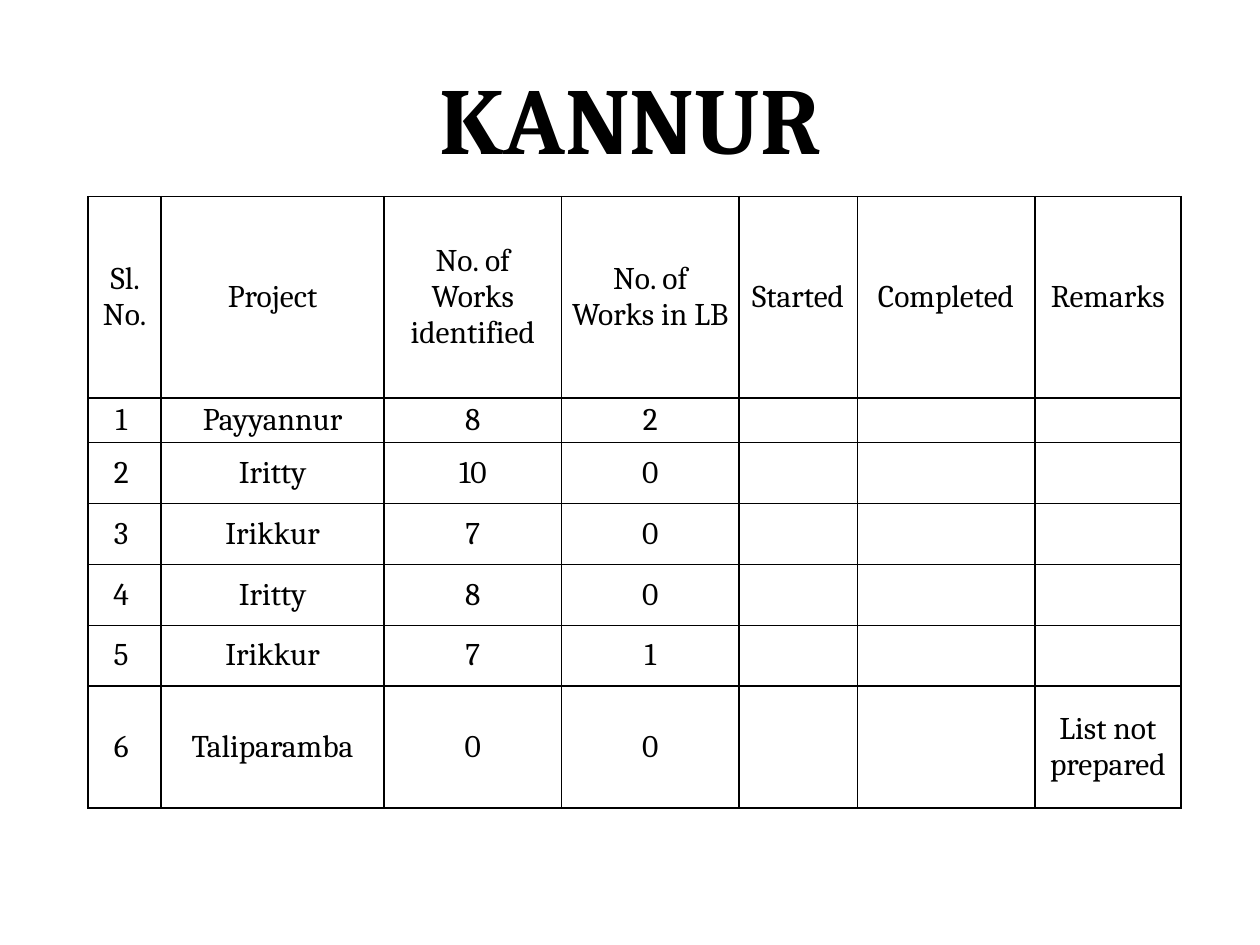
from lxml import etree
from pptx import Presentation
from pptx.dml.color import RGBColor
from pptx.enum import text
from pptx.oxml import ns
from pptx.util import Pt

BLACK = RGBColor(0, 0, 0)
COLUMN_WIDTHS = [41.7, 127.4, 101.4, 101.4, 67.6, 101.5, 83.5]
ROW_HEIGHTS = [115, 25.6] + [34.8] * 4 + [69.6]
HEADINGS = ["Sl. No.", "Project", "No. of Works identified", "No. of Works in LB",
            "Started", "Completed", "Remarks"]
PROJECTS = [
    ("Payyannur", 8, 2, ""),
    ("Iritty", 10, 0, ""),
    ("Irikkur", 7, 0, ""),
    ("Iritty", 8, 0, ""),
    ("Irikkur", 7, 1, ""),
    ("Taliparamba", 0, 0, "List not prepared"),
]


def apply(target, values):
    for name, value in values.items():
        setattr(target, name, value)


class ReportSlide:
    """Holds the style and the slide, and adds each kind of element."""

    font = "Cambria"
    cell_format = {
        "margin_left": Pt(5), "margin_right": Pt(5),
        "margin_top": 0, "margin_bottom": 0,
        "vertical_anchor": text.MSO_ANCHOR.MIDDLE,
    }
    paragraph_format = {"alignment": text.PP_ALIGN.CENTER, "space_after": Pt(10)}

    def __init__(self, deck):
        self.slide = deck.slides.add_slide(deck.slide_layouts[5])

    def add_words(self, paragraph, words, size, bold=False):
        run = paragraph.add_run()
        run.text = words
        apply(run.font, {"name": self.font, "size": Pt(size), "bold": bold})
        run.font.color.rgb = BLACK

    def title(self, words, left, top, width, height):
        heading = self.slide.shapes.title
        apply(heading, {"left": Pt(left), "top": Pt(top),
                        "width": Pt(width), "height": Pt(height)})
        heading.text_frame.vertical_anchor = text.MSO_ANCHOR.MIDDLE
        paragraph = heading.text_frame.paragraphs[0]
        paragraph.alignment = text.PP_ALIGN.CENTER
        self.add_words(paragraph, words, 54, bold=True)

    def border(self, cell):
        properties = cell._tc.get_or_add_tcPr()
        for side in ("a:lnL", "a:lnR", "a:lnT", "a:lnB"):
            line = etree.SubElement(properties, ns.qn(side), w=str(Pt(1)))
            fill = etree.SubElement(line, ns.qn("a:solidFill"))
            etree.SubElement(fill, ns.qn("a:srgbClr"), val=str(BLACK))

    def cell(self, cell, words):
        apply(cell, self.cell_format)
        self.border(cell)
        cell.fill.background()
        paragraph = cell.text_frame.paragraphs[0]
        apply(paragraph, self.paragraph_format)
        if words:
            self.add_words(paragraph, words, 18)

    def table(self, rows, left, top, widths, heights):
        works = self.slide.shapes.add_table(
            len(rows), len(widths), Pt(left), Pt(top),
            Pt(sum(widths)), Pt(sum(heights))).table
        apply(works, {"first_row": False, "horz_banding": False})
        for column, width in zip(works.columns, widths):
            column.width = Pt(width)
        for row, height, entries in zip(works.rows, heights, rows):
            row.height = Pt(height)
            for cell, words in zip(row.cells, entries):
                self.cell(cell, words)


def main():
    deck = Presentation()
    apply(deck, {"slide_width": Pt(720), "slide_height": Pt(540)})
    report = ReportSlide(deck)
    report.title("KANNUR", 36, 21.6, 648, 90)
    rows = [HEADINGS] + [
        [f"{number} ", project, str(identified), str(in_lb), "", "", remark]
        for number, (project, identified, in_lb, remark) in enumerate(PROJECTS, 1)
    ]
    report.table(rows, 50.4, 112.4, COLUMN_WIDTHS, ROW_HEIGHTS)
    deck.save("out.pptx")


if __name__ == "__main__":
    main()
